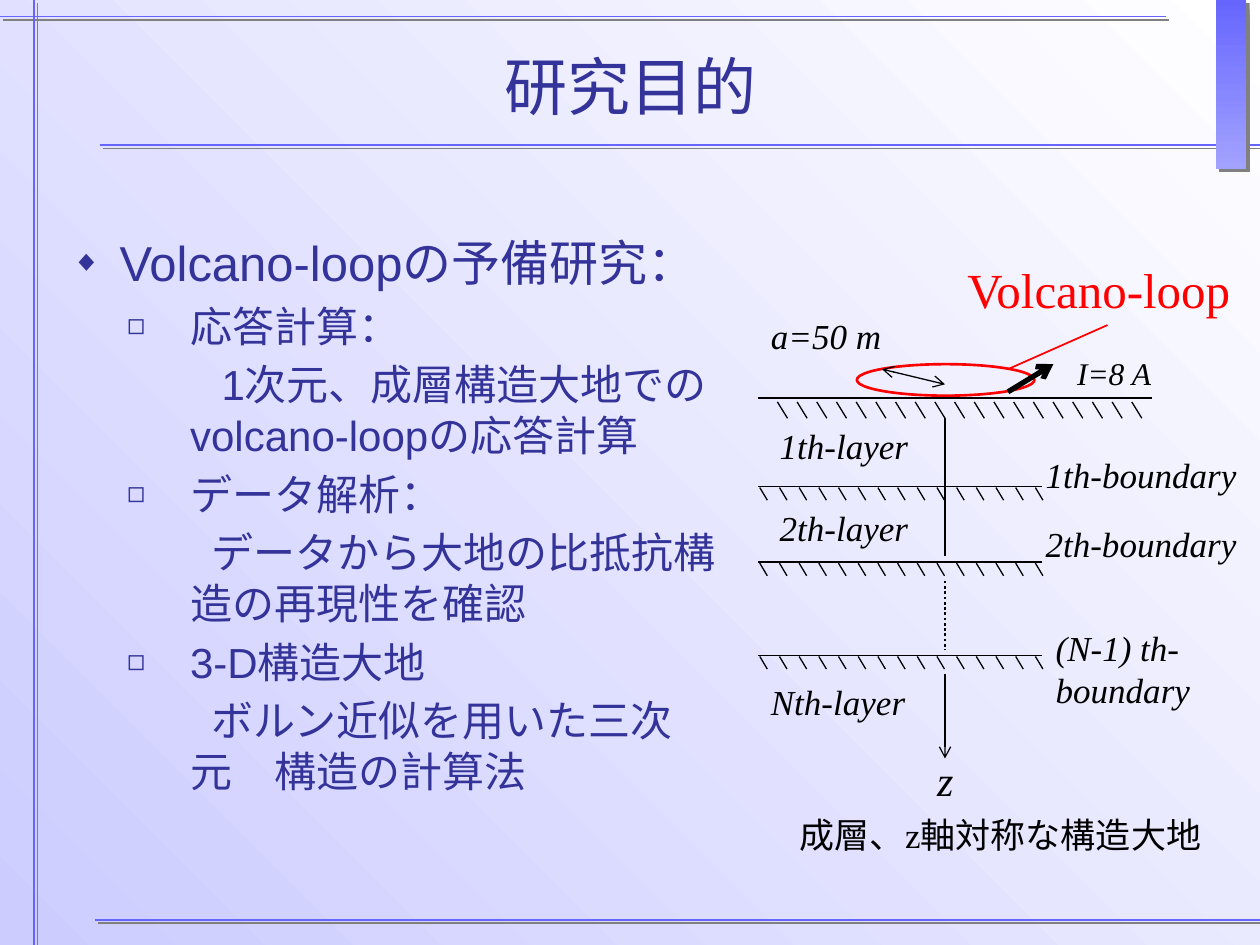
from lxml.etree import SubElement as Sub
from pptx import Presentation
from pptx.dml.color import RGBColor as RGB
from pptx.enum.dml import MSO_LINE as Dash
from pptx.enum.shapes import MSO_CONNECTOR as Conn, MSO_SHAPE as Form
from pptx.enum.text import MSO_ANCHOR as Anchor, PP_ALIGN as Align
from pptx.oxml.ns import qn
from pptx.util import Emu, Inches, Pt

NAVY = RGB(0x33, 0x33, 0x99)
BLUE = RGB(0x66, 0x66, 0xFF)
SKY = RGB(0xA2, 0xA2, 0xFF)
LILAC = RGB(0xCC, 0xCC, 0xFF)
WHITE = RGB(0xFF, 0xFF, 0xFF)
GRAY = RGB(0x80, 0x80, 0x80)
RED = RGB(0xFF, 0, 0)
BLACK = RGB(0, 0, 0)
SANS, SERIF = "Arial", "Times New Roman"

COLS, ROWS = 100, 75
WIDE, HIGH = Inches(10), Inches(7.5)

TITLE = "研究目的"
BODY = [
    ("Volcano-loopの予備研究：", 28, "◆", 60, 0.38, -0.38),
    ("応答計算：", 24, "◻", 70, 0.94, -0.5),
    ("1次元、成層構造大地でのvolcano-loopの応答計算", 24, None, 0, 0.94, 0.25),
    ("データ解析：", 24, "◻", 70, 0.94, -0.5),
    ("データから大地の比抵抗構造の再現性を確認", 24, None, 0, 0.94, 0.17),
    ("3-D構造大地", 24, "◻", 70, 0.94, -0.5),
    ("ボルン近似を用いた三次元　構造の計算法", 24, None, 0, 0.94, 0.17),
]
RULES = [
    (0, 1.3, 92.5, 1.3),
    (7.9, 11.5, 100.4, 11.5),
    (7.5, 73, 100, 73),
    (2.7, 0, 2.7, 75),
]
LABELS = [
    ("Volcano-loop", (75.8, 20.1, 24.2, 5.7), 28, RED, False),
    ("a=50 m", (60.2, 24.5, 13.3, 4.4), 20, BLACK, True),
    ("I=8 A", (84.5, 27.6, 10, 4), 18, BLACK, True),
    ("1th-layer", (60.9, 33.2, 15.6, 4.4), 20, BLACK, True),
    ("2th-layer", (60.9, 39.7, 20.3, 4.4), 20, BLACK, True),
    ("Nth-layer", (60.2, 53.5, 20.3, 4.4), 20, BLACK, True),
    ("1th-boundary", (82, 35.5, 19.5, 4.4), 20, BLACK, True),
    ("2th-boundary", (82, 41, 18, 4.4), 20, BLACK, True),
    ("(N-1) th-boundary", (82.8, 49.2, 18, 7.7), 20, BLACK, True),
    ("z", (73.4, 59.4, 4.7, 5), 24, BLACK, True),
    ("成層、z軸対称な構造大地", (62.5, 64.1, 35.9, 4.4), 20, BLACK, False),
]
LEFT, AXIS, STEP = 60.2, 75, COLS / 64
STRATA = [
    (31.6, 91.4, 61.7, 19, 0.8, 0.3, 1.6),
    (38.6, 82.7, 60.3, 15, 0.6, 0.1, 1.1),
    (44.6, 82.7, 60.3, 15, 0.6, 0.1, 1.1),
    (52, 82.7, 60.3, 15, 0.6, 0.1, 1.1),
]
MARKS = [
    ((70, 29.3, 75, 30.5), {"ends": ("headEnd", "tailEnd")}),
    ((80, 31.1, 83.6, 28.9), {"width": 3, "ends": ("tailEnd",)}),
    ((AXIS, 33.2, AXIS, 44.1), {}),
    ((AXIS, 46.1, AXIS, 51.6), {"width": 1.5, "dash": Dash.ROUND_DOT}),
    ((AXIS, 53.5, AXIS, 60.2), {"ends": ("tailEnd",)}),
    ((80, 29.3, 87.9, 25.8), {"color": RED, "width": 1}),
]


def grid(box):
    return [Emu(round(n * (HIGH / ROWS if i % 2 else WIDE / COLS)))
            for i, n in enumerate(box)]


def style(obj, **form):
    for key, val in form.items():
        setattr(obj, key, val)


def shade(shape, drop):
    fx = Sub(shape.element.spPr, qn("a:effectLst"))
    if drop:
        cast = Sub(fx, qn("a:outerShdw"), dist=str(Pt(2.8)),
                   dir="2700000", algn="ctr", rotWithShape="0")
        Sub(cast, qn("a:srgbClr"), val=str(GRAY))


def blend(fill, first, last, angle):
    fill.gradient()
    fill.gradient_angle = angle
    for stop, tone, spot in zip(fill.gradient_stops, (first, last), (0, 1)):
        stop.color.rgb = tone
        stop.position = spot


def draw(slide, ends_at, color=BLACK, width=0.75, dash=None, ends=(), drop=False):
    shape = slide.shapes.add_connector(Conn.STRAIGHT, *grid(ends_at))
    pen = shape.line
    pen.color.rgb = color
    pen.width = Pt(width)
    if dash:
        pen.dash_style = dash
    for end in ends:
        Sub(pen._get_or_add_ln(), qn("a:" + end), type="arrow")
    shade(shape, drop)


def write(par, text, size, color, face, italic=False):
    run = par.add_run()
    run.text = text
    style(run.font, size=Pt(size), name=face, italic=italic, bold=False)
    run.font.color.rgb = color


def area(slide, box):
    frame = slide.shapes.add_textbox(*grid(box)).text_frame
    frame.word_wrap = True
    return frame


def frame_page(slide):
    blend(slide.background.fill, LILAC, WHITE, 45)
    for rule in RULES:
        draw(slide, rule, BLUE, 1, drop=True)
    bar = slide.shapes.add_shape(Form.RECTANGLE, *grid((96.5, 0, 2.4, 13.4)))
    blend(bar.fill, BLUE, SKY, 270)
    bar.line.fill.background()
    shade(bar, True)


def add_title(slide):
    head = slide.shapes.title
    style(head, **dict(zip(("left", "top", "width", "height"),
                           grid((5, 0.5, 90, 12.5)))))
    head.text_frame.vertical_anchor = Anchor.MIDDLE
    par = head.text_frame.paragraphs[0]
    par.alignment = Align.CENTER
    write(par, TITLE, 36, NAVY, SANS)


def add_body(slide):
    frame = area(slide, (4.7, 18, 53.9, 51.6))
    for i, (text, size, sign, scale, margin, indent) in enumerate(BODY):
        par = frame.add_paragraph() if i else frame.paragraphs[0]
        par.level = min(i, 1)
        par.space_before = Pt(size * 0.2)
        props = par._p.get_or_add_pPr()
        props.set("marL", str(Inches(margin)))
        props.set("indent", str(Inches(indent)))
        if sign:
            Sub(props, qn("a:buSzPct"), val=str(scale * 1000))
            Sub(props, qn("a:buFont"), typeface=SANS)
            Sub(props, qn("a:buChar"), char=sign)
        else:
            Sub(props, qn("a:buNone"))
        write(par, text, size, NAVY, SANS)


def add_earth(slide):
    for y, right, start, count, lean, top, low in STRATA:
        draw(slide, (LEFT, y, right, y))
        for i in range(count):
            x = start + i * STEP
            draw(slide, (x, y + top, x + lean, y + low))
    loop = slide.shapes.add_shape(Form.OVAL, *grid((68, 28.9, 14.1, 2.5)))
    loop.fill.background()
    loop.line.color.rgb = RED
    loop.line.width = Pt(1.5)
    loop.shadow.inherit = False
    for ends_at, form in MARKS:
        draw(slide, ends_at, **form)
    for text, box, size, color, italic in LABELS:
        write(area(slide, box).paragraphs[0], text, size, color, SERIF, italic)


def main():
    deck = Presentation()
    style(deck, slide_width=WIDE, slide_height=HIGH)
    slide = deck.slides.add_slide(deck.slide_layouts[5])
    frame_page(slide)
    add_title(slide)
    add_body(slide)
    add_earth(slide)
    deck.save("out.pptx")


if __name__ == "__main__":
    main()
